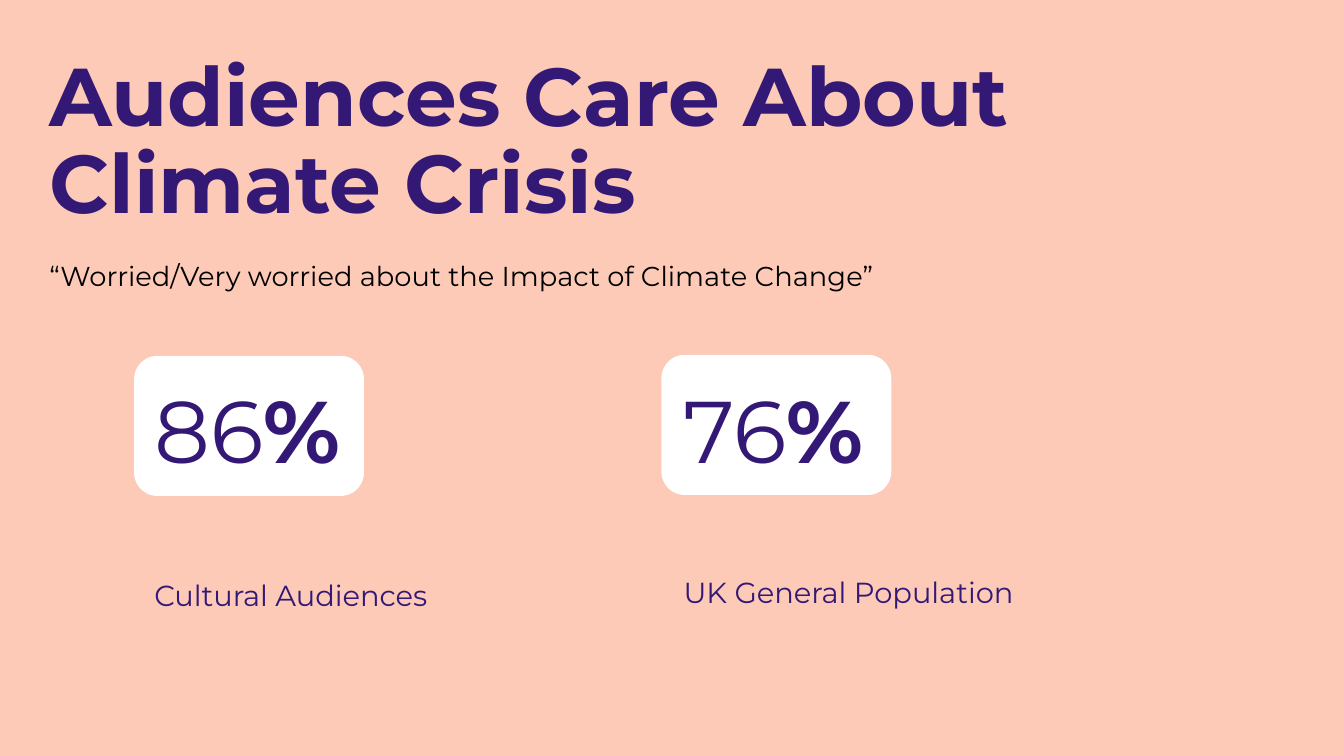
"""Build a slide comparing climate worry among cultural audiences and the UK public."""
import pptx
import pptx.dml.color
import pptx.enum.shapes
import pptx.enum.text
import pptx.util

EMU_PER_PX = 9144
FONT = "Montserrat"
PURPLE = "331975"
BLACK = "000000"
WHITE = "FFFFFF"
PEACH = "FCCAB6"


def px(length):
    return pptx.util.Emu(length * EMU_PER_PX)


def paint(target, colour):
    target.rgb = pptx.dml.color.RGBColor.from_string(colour)


def add_text(page, place, spans, size, leading, colour=PURPLE):
    box = page.shapes.add_textbox(*map(px, place))
    frame = box.text_frame
    frame.word_wrap = True
    frame.auto_size = pptx.enum.text.MSO_AUTO_SIZE.SHAPE_TO_FIT_TEXT
    frame.margin_left = frame.margin_top = 0
    frame.margin_right = frame.margin_bottom = 0
    para = frame.paragraphs[0]
    para.line_spacing = pptx.util.Pt(leading)
    for text, bold in spans:
        span = para.add_run()
        span.text = text
        span.font.name = FONT
        span.font.size = pptx.util.Pt(size)
        span.font.bold = bold
        paint(span.font.color, colour)


def add_card(page, left, top):
    card = page.shapes.add_shape(
        pptx.enum.shapes.MSO_SHAPE.ROUNDED_RECTANGLE,
        px(left), px(top), px(228), px(139),
    )
    card.shadow.inherit = False
    card.fill.solid()
    paint(card.fill.fore_color, WHITE)
    card.line.fill.background()


def add_statistic(page, card_place, text_left, number, label, label_top):
    add_card(page, *card_place)
    add_text(page, (text_left, 378, 397, 100),
             [(number, False), ("%", True)], 62.5, 71.5)
    add_text(page, (text_left, label_top, 502, 35), [(label, False)], 20.7, 25.1)


def main():
    deck = pptx.Presentation()
    deck.slide_width, deck.slide_height = px(1333), px(750)
    page = deck.slides.add_slide(deck.slide_layouts[6])
    page.background.fill.solid()
    paint(page.background.fill.fore_color, PEACH)

    add_text(page, (49, 55, 1026, 177),
             [("Audiences Care About Climate Crisis", True)], 58.5, 62.2)
    add_text(page, (49, 253, 1026, 34),
             [("“Worried/Very worried about the Impact of Climate Change”", False)],
             19.5, 26.6, BLACK)
    add_statistic(page, (133, 353), 153, "86", "Cultural Audiences", 573)
    add_statistic(page, (656, 352), 678, "76", "UK General Population", 570)
    deck.save("out.pptx")


if __name__ == "__main__":
    main()
